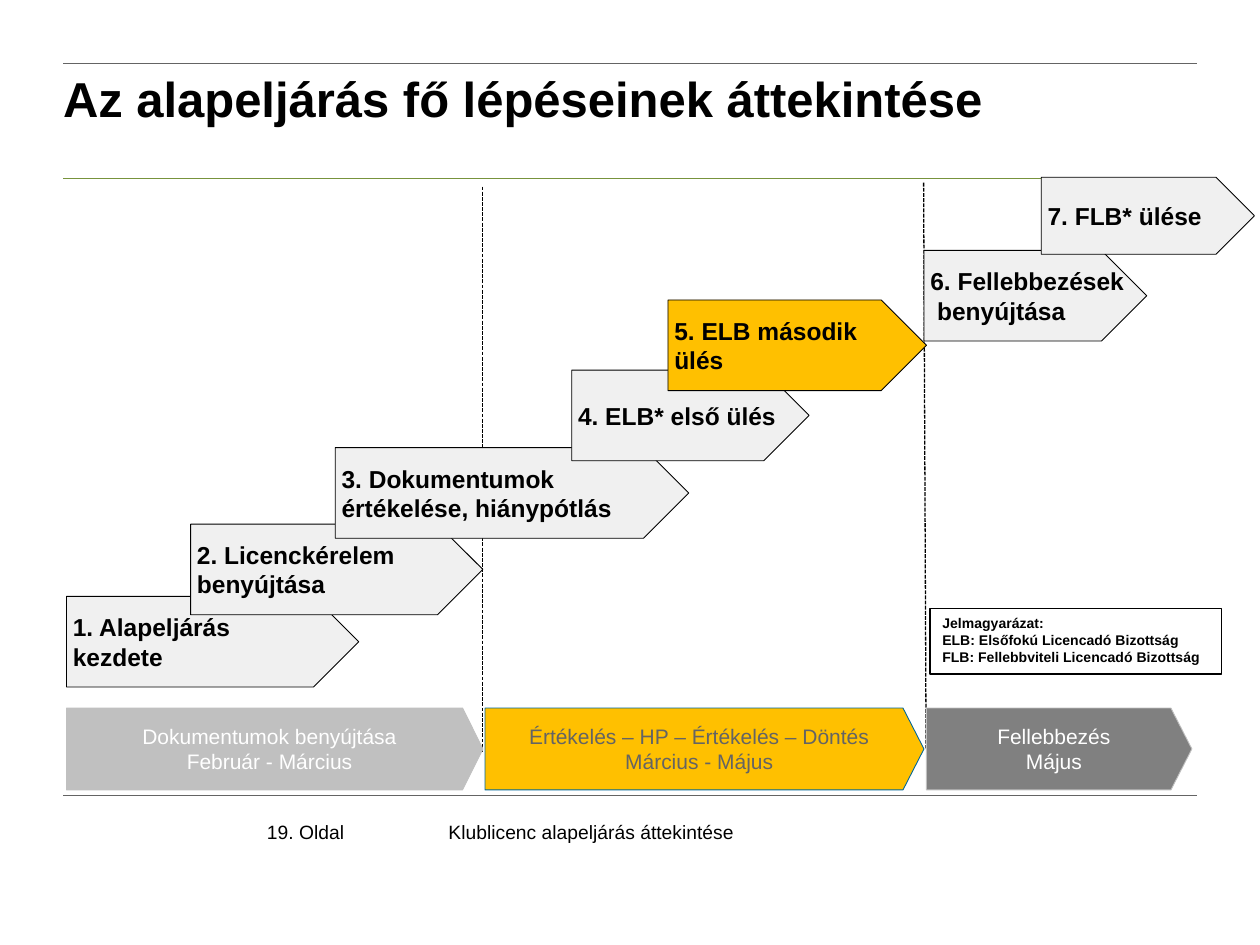
from dataclasses import dataclass

import pptx
import pptx.dml.color
import pptx.enum.dml
import pptx.enum.shapes
import pptx.enum.text
import pptx.util
from pptx.oxml.ns import qn

Pt = pptx.util.Pt
Align = pptx.enum.text.PP_ALIGN
Anchor = pptx.enum.text.MSO_ANCHOR
Shape = pptx.enum.shapes.MSO_SHAPE
Dash = pptx.enum.dml.MSO_LINE


@dataclass(frozen=True)
class Theme:
    font: str = "Arial"
    title_size: float = 28
    step_size: float = 14
    phase_size: float = 12
    footer_size: float = 11
    legend_size: float = 8
    black: str = "000000"
    white: str = "FFFFFF"
    step: str = "F0F0F0"
    highlight: str = "FFC000"
    silver: str = "C0C0C0"
    gray: str = "808080"
    rule: str = "646464"
    green: str = "77933C"
    blue: str = "006699"


THEME = Theme()


@dataclass(frozen=True)
class Step:
    left: float
    top: float
    width: float
    text: str
    height: float = 51.8
    fill: str = THEME.step


@dataclass(frozen=True)
class Phase:
    left: float
    width: float
    text: str
    fill: str
    line: str
    color: str
    point: float = 0.256


@dataclass(frozen=True)
class Rule:
    start: tuple[float, float]
    end: tuple[float, float]
    color: str
    width: float
    dash: Dash | None = None


PAGE_LEFT, PAGE_RIGHT = 36, 684
PHASE_TOP, PHASE_HEIGHT = 404.6, 46.8

RULES = [
    Rule((PAGE_LEFT, 102), (PAGE_RIGHT, 102), THEME.green, 1),
    Rule((PAGE_LEFT, 454.5), (PAGE_RIGHT, 454.5), THEME.rule, 0.25),
    Rule((PAGE_LEFT, 36), (PAGE_RIGHT, 36), THEME.rule, 0.5),
    Rule((527.8, 104.4), (529.2, 427.7), THEME.black, 0.75, Dash.SQUARE_DOT),
    Rule((275.8, 106.6), (275.8, 429.8), THEME.black, 0.75, Dash.SQUARE_DOT),
]

STEPS = [
    Step(38, 340.8, 167, "1. Alapeljárás\nkezdete"),
    Step(108.9, 299.5, 167, "2. Licenckérelem\nbenyújtása"),
    Step(191.6, 255.8, 202, "3. Dokumentumok\nértékelése, hiánypótlás"),
    Step(326.7, 211.5, 135.7, "4. ELB* első ülés"),
    Step(381.7, 171.4, 147.7, "5. ELB második\nülés", fill=THEME.highlight),
    Step(528, 143.1, 127.3, "6. Fellebbezések\n benyújtása"),
    Step(595, 101.3, 121.8, "7. FLB* ülése", height=44),
]

PHASES = [
    Phase(277.2, 250.8, "Értékelés – HP – Értékelés – Döntés\nMárcius - Május",
          THEME.highlight, THEME.blue, THEME.rule),
    Phase(529.4, 151.7, "Fellebbezés\nMájus", THEME.gray, THEME.silver, THEME.white),
    Phase(38, 238, "Dokumentumok benyújtása\nFebruár - Március",
          THEME.silver, THEME.silver, THEME.white, point=0.249),
]


def rgb(value: str) -> pptx.dml.color.RGBColor:
    return pptx.dml.color.RGBColor.from_string(value)


def write_text(box, text: str, *, size: float, color: str = THEME.black,
               bold: bool = False, align: Align = Align.LEFT,
               anchor: Anchor = Anchor.TOP, wrap: bool = True,
               inset: tuple[float, float] = (7.2, 3.6)) -> None:
    """Fill a box, one paragraph per line; inset is (horizontal, vertical)."""
    frame = box.text_frame
    frame.word_wrap = wrap
    frame.vertical_anchor = anchor
    frame.margin_left = frame.margin_right = Pt(inset[0])
    frame.margin_top = frame.margin_bottom = Pt(inset[1])
    for index, line in enumerate(text.split("\n")):
        para = frame.paragraphs[0] if index == 0 else frame.add_paragraph()
        para.alignment = align
        span = para.add_run()
        span.text = line
        span.font.name = THEME.font
        span.font.size = Pt(size)
        span.font.bold = bold
        span.font.color.rgb = rgb(color)


def add_box(page, kind: Shape, left: float, top: float, width: float, height: float,
            *, fill: str, line: str, line_width: float):
    box = page.shapes.add_shape(kind, Pt(left), Pt(top), Pt(width), Pt(height))
    box.shadow.inherit = False
    box.fill.solid()
    box.fill.fore_color.rgb = rgb(fill)
    box.line.color.rgb = rgb(line)
    box.line.width = Pt(line_width)
    return box


def add_rule(page, rule: Rule) -> None:
    connector = page.shapes.add_connector(
        pptx.enum.shapes.MSO_CONNECTOR.STRAIGHT,
        *(Pt(value) for value in rule.start + rule.end))
    connector.line.color.rgb = rgb(rule.color)
    connector.line.width = Pt(rule.width)
    if rule.dash is not None:
        connector.line.dash_style = rule.dash
    properties = connector._element.spPr
    properties.append(properties.makeelement(qn("a:effectLst"), {}))


def add_step(page, step: Step) -> None:
    box = add_box(page, Shape.PENTAGON, step.left, step.top, step.width, step.height,
                  fill=step.fill, line=THEME.black, line_width=0.5)
    box.adjustments[0] = 0.5
    write_text(box, step.text, size=THEME.step_size, bold=True,
               anchor=Anchor.MIDDLE, wrap=False, inset=(3.6, 3.6))


def add_phase(page, phase: Phase) -> None:
    box = add_box(page, Shape.PENTAGON, phase.left, PHASE_TOP, phase.width, PHASE_HEIGHT,
                  fill=phase.fill, line=phase.line, line_width=0.5)
    box.adjustments[0] = phase.point
    write_text(box, phase.text, size=THEME.phase_size, color=phase.color,
               align=Align.CENTER, anchor=Anchor.MIDDLE, inset=(3.6, 3.6))


def add_footer(page, left: float, width: float, text: str) -> None:
    box = page.shapes.add_textbox(Pt(left), Pt(468.7), Pt(width), Pt(15.8))
    write_text(box, text, size=THEME.footer_size, wrap=False, inset=(0, 0))


def add_legend(page) -> None:
    box = add_box(page, Shape.RECTANGLE, 531.4, 347.8, 166.8, 37.4,
                  fill=THEME.white, line=THEME.black, line_width=0.75)
    write_text(box, "Jelmagyarázat:\nELB: Elsőfokú Licencadó Bizottság\n"
               "FLB: Fellebbviteli Licencadó Bizottság",
               size=THEME.legend_size, bold=True)


def main() -> None:
    deck = pptx.Presentation()
    deck.slide_width, deck.slide_height = Pt(720), Pt(540)
    page = deck.slides.add_slide(deck.slide_layouts[5])

    title = page.shapes.title
    title.left, title.top, title.width, title.height = Pt(28.8), Pt(35.3), Pt(653.8), Pt(41)
    write_text(title, "Az alapeljárás fő lépéseinek áttekintése",
               size=THEME.title_size, bold=True)

    add_footer(page, 256.3, 247, "Klublicenc alapeljárás áttekintése")
    add_footer(page, 152.6, 52.6, "19. Oldal")
    for rule in RULES:
        add_rule(page, rule)
    for step in STEPS:
        add_step(page, step)
    add_legend(page)
    for phase in PHASES:
        add_phase(page, phase)

    deck.save("out.pptx")


if __name__ == "__main__":
    main()
